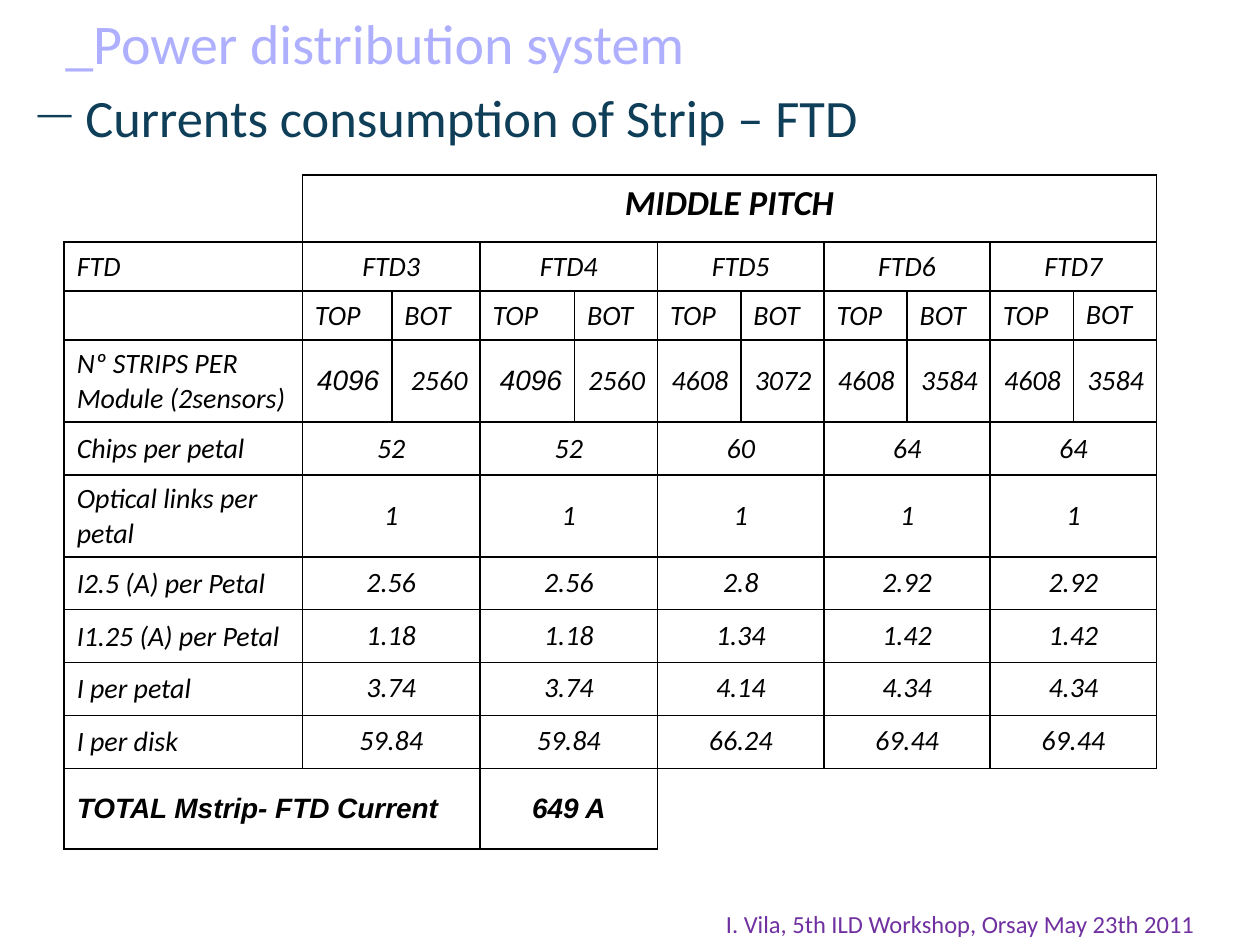
from lxml import etree
from pptx import Presentation
from pptx.dml.color import RGBColor
from pptx.enum.text import MSO_ANCHOR as ANCHOR, PP_ALIGN as ALIGN
from pptx.oxml.ns import qn
from pptx.util import Inches, Pt

NAVY, LILAC, PURPLE, BLACK = "0E3E58", "AFAFFF", "7030A0", "000000"
NO_STYLE = "{2D5ABB26-0587-4C30-8999-92F81FD0307C}"

COL_WIDTHS = [1.89, 0.71, 0.7, 0.75] + [0.66] * 7
ROW_HEIGHTS = [0.53, 0.39, 0.39, 0.65, 0.42, 0.65] + [0.42] * 4 + [0.64]
LAST_ROW = len(ROW_HEIGHTS) - 1
LAST_COL = len(COL_WIDTHS) - 1

DISKS = ["FTD3", "FTD4", "FTD5", "FTD6", "FTD7"]
STRIPS = ["4096", "2560", "4096", "2560", "4608",
          "3072", "4608", "3584", "4608", "3584"]
PER_DISK_ROWS = [
    ("Chips per petal", ["52", "52", "60", "64", "64"]),
    ("Optical links per petal", ["1"] * 5),
    ("I2.5 (A) per Petal", ["2.56", "2.56", "2.8", "2.92", "2.92"]),
    ("I1.25 (A) per Petal", ["1.18", "1.18", "1.34", "1.42", "1.42"]),
    ("I per petal", ["3.74", "3.74", "4.14", "4.34", "4.34"]),
    ("I per disk", ["59.84", "59.84", "66.24", "69.44", "69.44"]),
]

ARIAL = {"name": "Arial", "spacing": 0.93, "insets": (0.1, 0.07, 0.1, 0.05)}
TIGHT = {"spacing": 0.8, "insets": (0.01, 0.01, 0.01, 0)}


def rgb(value):
    return RGBColor.from_string(value)


def set_attrs(obj, values):
    for name, value in values.items():
        setattr(obj, name, value)


def write(tf, text, color, align=ALIGN.LEFT, spacing=1.0, **font):
    p = tf.paragraphs[0]
    set_attrs(p, {"alignment": align, "line_spacing": spacing})
    r = p.add_run()
    r.text = text
    set_attrs(r.font, font)
    r.font.color.rgb = rgb(color)
    return p


def add_text(slide, box, text, color, size, anchor, **options):
    tf = slide.shapes.add_textbox(*map(Inches, box)).text_frame
    set_attrs(tf, {"word_wrap": True, "vertical_anchor": anchor})
    return write(tf, text, color, size=Pt(size), name="Calibri", **options)


def add_dash_bullet(p, color):
    """Hang the paragraph on a small dash."""
    pPr = p._p.get_or_add_pPr()
    pPr.set("marL", str(Inches(0.38)))
    pPr.set("indent", str(-Inches(0.38)))
    clr = etree.SubElement(pPr, qn("a:buClr"))
    etree.SubElement(clr, qn("a:srgbClr"), val=color)
    etree.SubElement(pPr, qn("a:buSzPct"), val="65000")
    etree.SubElement(pPr, qn("a:buChar"), char="—")


def set_borders(cell, sides):
    """Draw the named sides (of L, R, T, B) and leave the others open."""
    tcPr = cell._tc.get_or_add_tcPr()
    for side in "LRTB":
        ln = etree.SubElement(tcPr, qn("a:ln" + side), w=str(Pt(1)))
        if side in sides:
            fill = etree.SubElement(ln, qn("a:solidFill"))
            etree.SubElement(fill, qn("a:srgbClr"), val=BLACK)
        else:
            etree.SubElement(ln, qn("a:noFill"))


def fill_cell(table, row, col, text, span=1, anchor=ANCHOR.MIDDLE,
              insets=(0.1, 0.05, 0.1, 0.05), **options):
    cell = table.cell(row, col)
    if span > 1:
        cell.merge(table.cell(row, col + span - 1))
    sides = ("margin_left", "margin_top", "margin_right", "margin_bottom")
    set_attrs(cell, dict(zip(sides, map(Inches, insets))))
    cell.vertical_anchor = anchor
    style = {"size": Pt(16), "name": "Calibri", "italic": True,
             "spacing": 1.02} | options
    write(cell.text_frame, text, BLACK, **style)


def fill_pairs(table, row, values, **options):
    """Centre one value over each TOP/BOT pair of columns."""
    for i, value in enumerate(values):
        fill_cell(table, row, 1 + 2 * i, value, span=2,
                  align=ALIGN.CENTER, **options)


def format_cells(table):
    open_sides = {(0, 0): "RB", (LAST_ROW, 5): "LT"}
    open_sides |= {(LAST_ROW, c): "T" for c in range(6, LAST_COL + 1)}
    for r in range(LAST_ROW + 1):
        for c in range(LAST_COL + 1):
            cell = table.cell(r, c)
            if cell.is_spanned:
                continue
            set_borders(cell, open_sides.get((r, c), "LRTB"))
            cell.fill.background()
            if not cell.text:
                set_attrs(cell, {"margin_top": 0, "margin_bottom": 0})


def add_current_table(slide):
    shape = slide.shapes.add_table(
        len(ROW_HEIGHTS), len(COL_WIDTHS), Inches(0.51), Inches(1.39),
        Inches(sum(COL_WIDTHS)), Inches(sum(ROW_HEIGHTS)))
    table = shape.table
    set_attrs(table, {"first_row": False, "horz_banding": False})
    table._tbl.tblPr.find(qn("a:tableStyleId")).text = NO_STYLE
    for column, width in zip(table.columns, COL_WIDTHS):
        column.width = Inches(width)
    for row, height in zip(table.rows, ROW_HEIGHTS):
        row.height = Inches(height)

    fill_cell(table, 0, 1, "MIDDLE PITCH", span=10, anchor=ANCHOR.TOP,
              align=ALIGN.CENTER, size=Pt(20), bold=True)
    fill_cell(table, 1, 0, "FTD")
    fill_pairs(table, 1, DISKS)
    fill_cell(table, 3, 0, "Nº STRIPS PER Module (2sensors)")
    for c, strips in enumerate(STRIPS, 1):
        fill_cell(table, 2, c, "TOP" if c % 2 else "BOT",
                  anchor=ANCHOR.TOP if c == LAST_COL else ANCHOR.MIDDLE)
        fill_cell(table, 3, c, strips, align=ALIGN.RIGHT,
                  **(ARIAL if strips == "4096" else {}))
    for r, (label, values) in enumerate(PER_DISK_ROWS, 4):
        fill_cell(table, r, 0, label)
        fill_pairs(table, r, values, **(TIGHT if r > 5 else {}))
    fill_cell(table, LAST_ROW, 0, "TOTAL Mstrip- FTD Current", span=3,
              bold=True, **ARIAL)
    fill_cell(table, LAST_ROW, 3, "649 A", span=2, align=ALIGN.CENTER,
              bold=True, **ARIAL)
    format_cells(table)


def main():
    prs = Presentation()
    set_attrs(prs, {"slide_width": Inches(10), "slide_height": Inches(7.5)})
    slide = prs.slides.add_slide(prs.slide_layouts[6])
    add_text(slide, (0.42, 0, 8.12, 0.67), "_Power distribution system",
             LILAC, 32, ANCHOR.MIDDLE)
    heading = add_text(slide, (0.2, 0.68, 9.6, 0.71),
                       "Currents consumption of Strip – FTD",
                       NAVY, 30, ANCHOR.TOP, spacing=0.9)
    add_dash_bullet(heading, NAVY)
    add_current_table(slide)
    add_text(slide, (3.75, 7, 5.83, 0.5),
             "I. Vila, 5th ILD Workshop, Orsay May 23th 2011",
             PURPLE, 14, ANCHOR.BOTTOM, align=ALIGN.RIGHT)
    prs.save("out.pptx")


if __name__ == "__main__":
    main()
